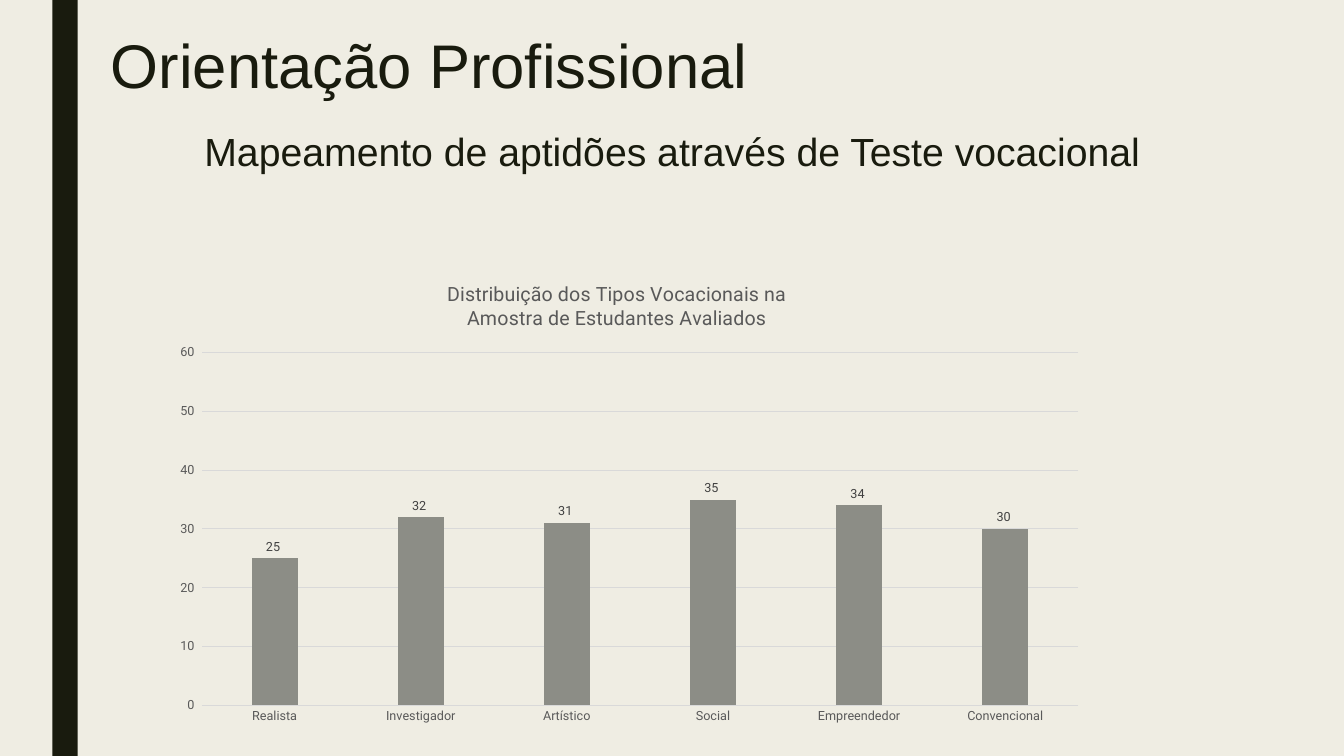
from pptx import Presentation
from pptx.chart.data import CategoryChartData
from pptx.dml.color import RGBColor
from pptx.enum.chart import XL_CHART_TYPE, XL_LABEL_POSITION, XL_TICK_MARK
from pptx.enum.shapes import MSO_SHAPE
from pptx.enum.text import MSO_ANCHOR, PP_ALIGN
from pptx.oxml import parse_xml
from pptx.oxml.ns import nsdecls
from pptx.util import Inches, Pt

COLUMN = XL_CHART_TYPE.COLUMN_CLUSTERED
OUTSIDE = XL_LABEL_POSITION.OUTSIDE_END
NO_TICK = XL_TICK_MARK.NONE
RECT = MSO_SHAPE.RECTANGLE
TOP = MSO_ANCHOR.TOP
LEFT, CENTER = PP_ALIGN.LEFT, PP_ALIGN.CENTER

CREAM = RGBColor(0xEF, 0xED, 0xE3)
INK = RGBColor(0x19, 0x1B, 0x0E)
GRAY = RGBColor(0x8C, 0x8D, 0x86)
LABEL = RGBColor(0x40, 0x40, 0x40)
TEXT = RGBColor(0x59, 0x59, 0x59)
GRID = RGBColor(0xD9, 0xD9, 0xD9)

TYPES = {"Realista": 25, "Investigador": 32, "Artístico": 31,
         "Social": 35, "Empreendedor": 34, "Convencional": 30}
FORMAT = r"0_ ;[Red]\-0\ "


def style(font, name, size, color):
    font.name, font.size, font.bold = name, Pt(size), False
    font.color.rgb = color


def rule(line):
    line.color.rgb = GRID
    line.width = Pt(0.75)


def add_band(slide, x, y, w, h):
    band = slide.shapes.add_shape(RECT, Inches(x), Inches(y), Inches(w), Inches(h))
    band.shadow.inherit = False
    band.fill.solid()
    band.fill.fore_color.rgb = INK
    band.line.fill.background()


def fill_holder(holder, text, size, align, x, y, w, h):
    holder.left, holder.top = Inches(x), Inches(y)
    holder.width, holder.height = Inches(w), Inches(h)
    frame = holder.text_frame
    frame.text = text
    frame.word_wrap = True
    frame.vertical_anchor = TOP
    para = frame.paragraphs[0]
    para.alignment = align
    style(para.font, "Arial", size, INK)
    return para


def add_body(holder, text, x, y, w, h):
    para = fill_holder(holder, text, 28, CENTER, x, y, w, h)
    para.line_spacing = 0.94
    para.space_before, para.space_after = Pt(10), Pt(2)
    # No bullet and no indent
    props = para._p.get_or_add_pPr()
    props.set("marL", "0")
    props.set("indent", "0")
    props.append(parse_xml(f"<a:buNone {nsdecls('a')}/>"))


def set_layout(part, index, target="", **box):
    """Place a chart part by fractions of the chart area."""
    for old in part.xpath("c:layout"):
        part.remove(old)
    modes = "".join(f'<c:{k}Mode val="edge"/>' for k in "xy")
    sizes = "".join(f'<c:{k} val="{v}"/>' for k, v in box.items())
    part.insert(index, parse_xml(
        f"<c:layout {nsdecls('c')}><c:manualLayout>{target}{modes}{sizes}"
        "</c:manualLayout></c:layout>"))


def add_types(slide, x, y, w, h):
    data = CategoryChartData(number_format="0")
    data.categories = list(TYPES)
    data.add_series("Series 1", list(TYPES.values()))
    chart = slide.shapes.add_chart(
        COLUMN, Inches(x), Inches(y), Inches(w), Inches(h), data).chart
    chart.has_legend = False
    chart.font.name, chart.font.size = "Roboto", Pt(10)

    # Title
    frame = chart.chart_title.text_frame
    frame.text = ("Distribuição dos Tipos Vocacionais na\n"
                  "Amostra de Estudantes Avaliados")
    for para in frame.paragraphs:
        para.alignment = CENTER
        style(para.font, "Roboto", 14, TEXT)
    root = chart.element
    set_layout(root.xpath("c:chart/c:title")[0], 1, x=0.3, y=0.03)
    set_layout(root.xpath("c:chart/c:plotArea")[0], 0,
               '<c:layoutTarget val="inner"/>', x=0.04, y=0.19, w=0.94, h=0.75)

    # Axes
    cat, val = chart.category_axis, chart.value_axis
    for axis in (cat, val):
        axis.major_tick_mark = axis.minor_tick_mark = NO_TICK
        style(axis.tick_labels.font, "Roboto", 9, TEXT)
    rule(cat.format.line)
    val.format.line.fill.background()
    val.minimum_scale, val.maximum_scale, val.major_unit = 0, 60, 10
    rule(val.major_gridlines.format.line)
    val.tick_labels.number_format = FORMAT
    val.tick_labels.number_format_is_linked = False

    # Columns and their values
    plot = chart.plots[0]
    plot.gap_width = 219
    plot.vary_by_categories = False
    series = plot.series[0]
    series.format.fill.solid()
    series.format.fill.fore_color.rgb = GRAY
    labels = series.data_labels
    labels.show_value = True
    labels.position = OUTSIDE
    labels.number_format = FORMAT
    labels.number_format_is_linked = False
    style(labels.font, "Roboto", 9, LABEL)


def main():
    deck = Presentation()
    deck.slide_width, deck.slide_height = Inches(13.33), Inches(7.5)
    slide = deck.slides.add_slide(deck.slide_layouts[1])
    slide.background.fill.solid()
    slide.background.fill.fore_color.rgb = CREAM

    add_band(slide, 0.52, 0, 0.25, 7.5)
    title = fill_holder(slide.shapes.title, "Orientação Profissional",
                        44, LEFT, 1, 0.31, 11.33, 1.75)
    title.line_spacing = 0.89
    add_body(slide.placeholders[1],
             "Mapeamento de aptidões através de Teste vocacional",
             1, 1.25, 11.33, 6.02)
    add_types(slide, 1.63, 2.61, 9.25, 4.67)
    deck.save("out.pptx")


if __name__ == "__main__":
    main()
